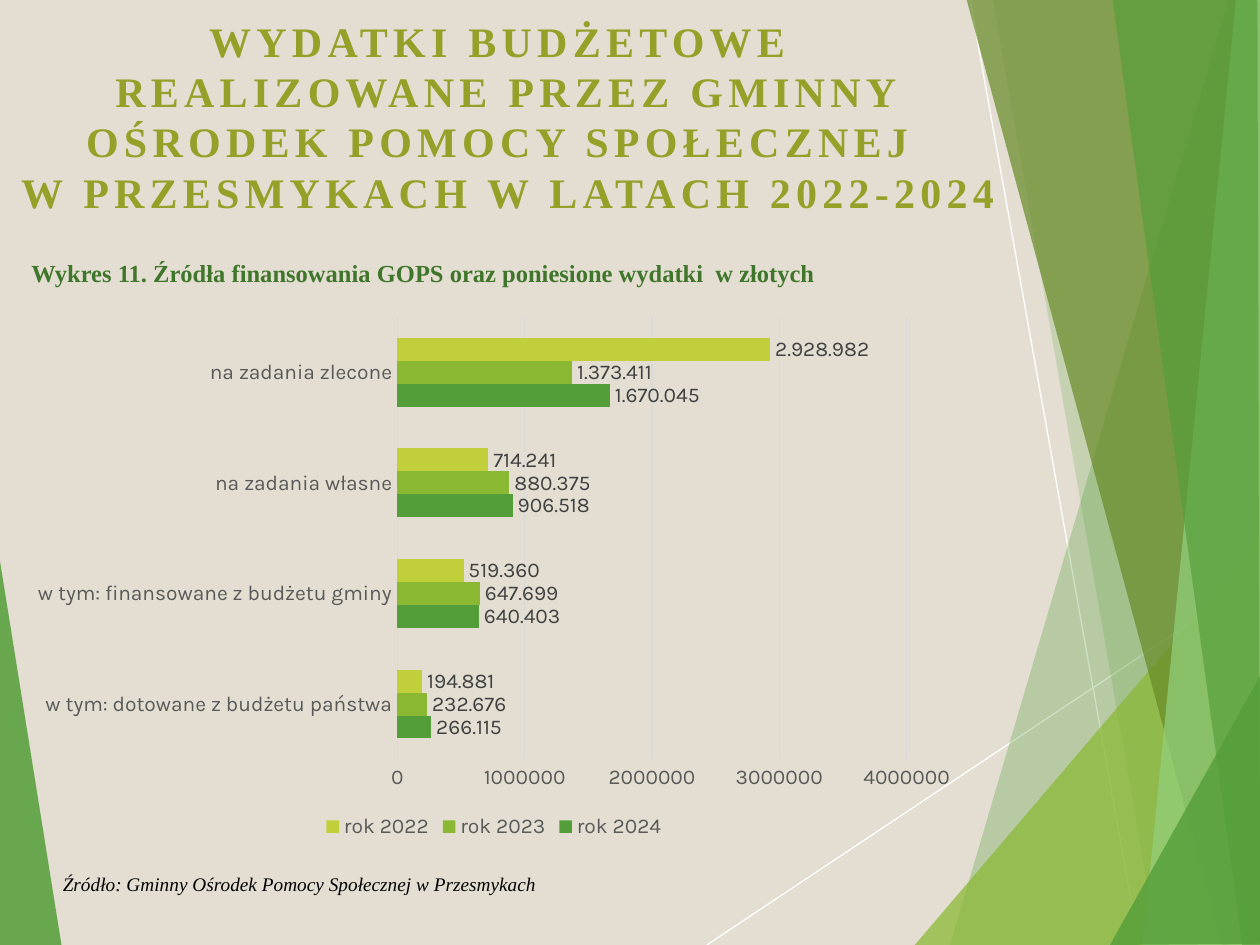
from lxml.etree import SubElement
from pptx import Presentation
from pptx.chart.data import CategoryChartData
from pptx.dml.color import RGBColor
from pptx.enum.chart import XL_CHART_TYPE as ChartType
from pptx.enum.chart import XL_LABEL_POSITION as LabelPosition
from pptx.enum.chart import XL_LEGEND_POSITION as LegendPosition
from pptx.enum.chart import XL_TICK_MARK as TickMark
from pptx.enum.shapes import MSO_CONNECTOR as Connector
from pptx.enum.text import PP_ALIGN as Align
from pptx.oxml.ns import qn
from pptx.util import Inches, Pt

BACKGROUND = RGBColor(0xE3, 0xDE, 0xD1)
WHITE = RGBColor(0xFF, 0xFF, 0xFF)
BLACK = RGBColor(0x00, 0x00, 0x00)
GREEN = RGBColor(0x54, 0x9E, 0x39)
LEAF = RGBColor(0x8A, 0xB8, 0x33)
LIME = RGBColor(0xC0, 0xCF, 0x3A)
MOSS = RGBColor(0x67, 0x8A, 0x26)
MINT = RGBColor(0x93, 0xD0, 0x7D)
OLIVE = RGBColor(0x94, 0xA0, 0x27)
DARK_GREEN = RGBColor(0x3F, 0x76, 0x2B)
AXIS_TEXT = RGBColor(0x59, 0x59, 0x59)
LABEL_TEXT = RGBColor(0x40, 0x40, 0x40)
GRID = RGBColor(0xD9, 0xD9, 0xD9)
SERIF = "Times New Roman"
SANS = "Karla"


def style_font(font, name, size, color, bold=False, italic=False):
    font.name = name
    font.size = Pt(size)
    font.color.rgb = color
    font.bold = bold
    font.italic = italic


def add_text_frame(left, top, width, height):
    frame = slide.shapes.add_textbox(
        Inches(left), Inches(top), Inches(width), Inches(height)).text_frame
    frame.word_wrap = True
    return frame


prs = Presentation()
prs.slide_width = Inches(10)
prs.slide_height = Inches(7.5)
slide = prs.slides.add_slide(prs.slide_layouts[6])
slide.background.fill.solid()
slide.background.fill.fore_color.rgb = BACKGROUND

# Background rays and translucent facets
for x1, y1, x2, y2 in [(5.61, 7.5, 10.01, 4.57), (7.7, 0, 9.04, 7.5)]:
    ray = slide.shapes.add_connector(
        Connector.STRAIGHT, Inches(x1), Inches(y1), Inches(x2), Inches(y2))
    ray.line.color.rgb = WHITE
    ray.line.width = Pt(0.75)
    SubElement(ray._element.spPr, qn("a:effectLst"))

facets = [
    (GREEN, 85, [(-0.01, 4.39), (0.49, 7.51), (-0.01, 7.5)]),
    (GREEN, 30, [(9.75, 0), (7.54, 7.5), (10.02, 7.51), (10.01, 0.01)]),
    (GREEN, 20, [(7.88, -0.01), (9.19, 7.5), (10.01, 7.5), (10.01, -0.01)]),
    (LEAF, 72, [(7.26, 7.5), (10, 4.29), (10.01, 7.5)]),
    (MOSS, 70, [(7.67, -0.01), (9.7, 7.5), (10.01, 7.49), (10.01, -0.01)]),
    (MINT, 70, [(9.81, -0.01), (9.07, 7.5), (10.01, 7.5), (10, -0.01)]),
    (GREEN, 65, [(8.83, -0.01), (9.86, 7.5), (10, 7.5), (9.98, -0.01)]),
    (GREEN, 80, [(8.81, 7.5), (10.01, 5.35), (10.01, 7.49)]),
]
for color, opacity, corners in facets:
    points = [(Inches(x), Inches(y)) for x, y in corners]
    builder = slide.shapes.build_freeform(*points[0])
    builder.add_line_segments(points[1:], close=True)
    facet = builder.convert_to_shape()
    facet.shadow.inherit = False
    facet.line.fill.background()
    facet.fill.solid()
    facet.fill.fore_color.rgb = color
    color_node = facet._element.spPr.find(qn("a:solidFill"))[0]
    SubElement(color_node, qn("a:alpha"), val=str(opacity * 1000))

# Title
title = add_text_frame(0.02, 0.07, 8.02, 1.25).paragraphs[0]
title.alignment = Align.CENTER
title_lines = [
    "WYDATKI BUDŻETOWE ",
    "REALIZOWANE PRZEZ GMINNY OŚRODEK POMOCY SPOŁECZNEJ ",
    "W PRZESMYKACH W LATACH 2022-2024",
]
for i, line in enumerate(title_lines):
    if i:
        title.add_line_break()
    run = title.add_run()
    run.text = line
    style_font(run.font, SERIF, 24, OLIVE, bold=True)
    run.font._element.set("spc", "300")

# Chart caption
caption = add_text_frame(0.15, 2, 9.53, 0.55).paragraphs[0].add_run()
caption.text = "Wykres 11. Źródła finansowania GOPS oraz poniesione wydatki  w złotych"
style_font(caption.font, SERIF, 14, DARK_GREEN, bold=True)

# Chart of spending by funding source
spending = [
    ("rok 2024", GREEN, (266115, 640403, 906518, 1670045)),
    ("rok 2023", LEAF, (232676, 647699, 880375, 1373411)),
    ("rok 2022", LIME, (194881, 519360, 714241, 2928982)),
]
chart_data = CategoryChartData(number_format="General")
chart_data.categories = [
    "w tym: dotowane z budżetu państwa",
    "w tym: finansowane z budżetu gminy",
    "na zadania własne",
    "na zadania zlecone",
]
for year, _, amounts in spending:
    chart_data.add_series(year, amounts)
chart = slide.shapes.add_chart(
    ChartType.BAR_CLUSTERED, Inches(0.15), Inches(2.43), Inches(7.54),
    Inches(4.27), chart_data).chart
style_font(chart.font, SANS, 10, BLACK)
chart.has_title = False
chart.has_legend = True
chart.legend.position = LegendPosition.BOTTOM
chart.legend.include_in_layout = False
style_font(chart.legend.font, SANS, 12, AXIS_TEXT)

for axis in (chart.category_axis, chart.value_axis):
    axis.major_tick_mark = TickMark.NONE
    axis.minor_tick_mark = TickMark.NONE
    style_font(axis.tick_labels.font, SANS, 12, AXIS_TEXT)
chart.value_axis.format.line.fill.background()
chart.value_axis.minimum_scale = 0
chart.value_axis.maximum_scale = 4000000
chart.value_axis.major_unit = 1000000
for line in (chart.category_axis.format.line,
             chart.value_axis.major_gridlines.format.line):
    line.color.rgb = GRID
    line.width = Pt(0.75)

plot = chart.plots[0]
plot.gap_width = 182
plot.overlap = 0
plot.vary_by_categories = False
for series, (_, color, amounts) in zip(plot.series, spending):
    series.format.fill.solid()
    series.format.fill.fore_color.rgb = color
    series.data_labels.show_value = True
    series.data_labels.position = LabelPosition.OUTSIDE_END
    style_font(series.data_labels.font, SANS, 12, LABEL_TEXT)
    for i, amount in enumerate(amounts):
        label = series.points[i].data_label
        run = label.text_frame.paragraphs[0].add_run()
        run.text = f"{amount:,}".replace(",", ".")
        style_font(run.font, SANS, 12, LABEL_TEXT)
        label.position = LabelPosition.OUTSIDE_END

# Source note
source = add_text_frame(0.4, 6.87, 5, 0.29).paragraphs[0].add_run()
source.text = "Źródło: Gminny Ośrodek Pomocy Społecznej w Przesmykach"
style_font(source.font, SERIF, 11, BLACK, italic=True)

prs.save("out.pptx")
